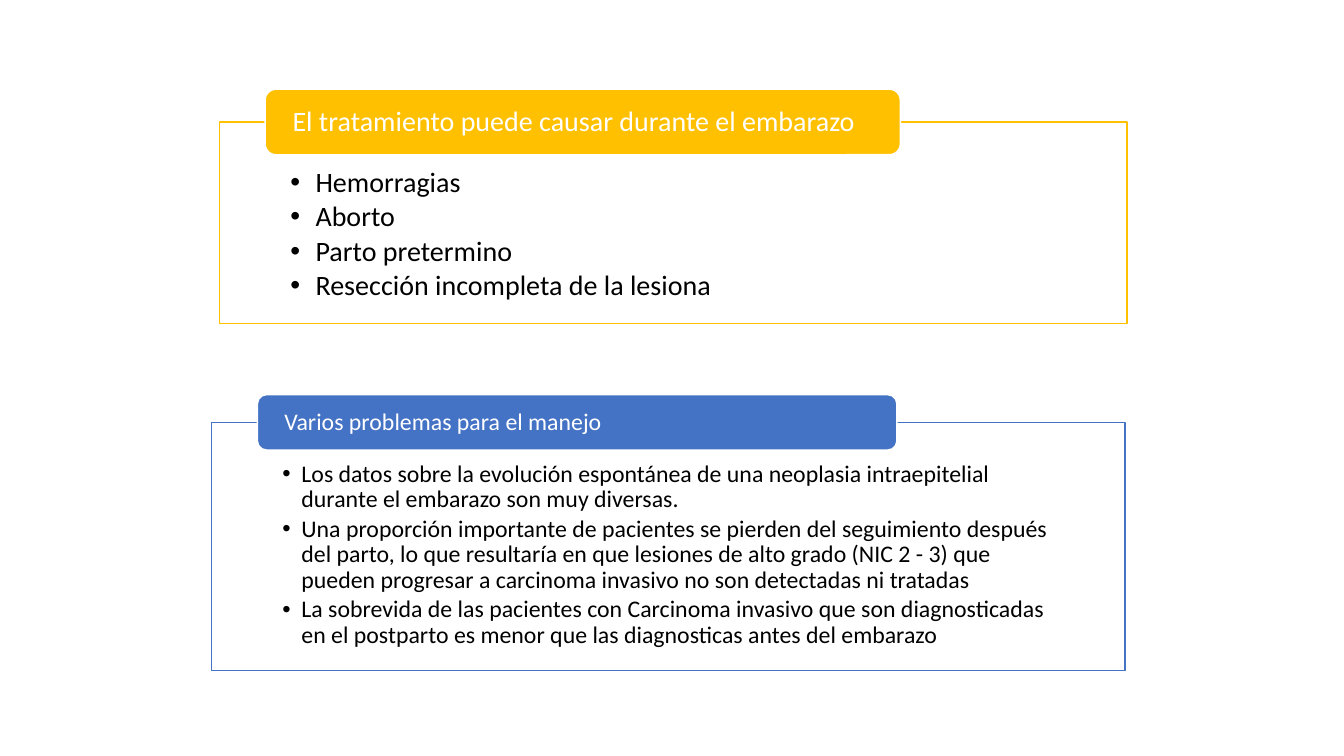
from lxml.etree import SubElement
from pptx import Presentation
from pptx.dml.color import RGBColor
from pptx.enum.shapes import MSO_SHAPE
from pptx.enum.text import MSO_ANCHOR, PP_ALIGN
from pptx.oxml.ns import qn
from pptx.util import Inches, Pt

COLORS = {"gold": "FFC000", "blue": "4472C4", "white": "FFFFFF", "black": "000000"}

PANELS = [
    {
        "box": (2.18, 1.21, 9, 2), "tab": 0.65, "color": "gold", "size": 20,
        "indent": 0.25, "pad": (0.46, 0.16),
        "title": "El tratamiento puede causar durante el embarazo",
        "items": [
            "Hemorragias",
            "Aborto",
            "Parto pretermino",
            "Resección incompleta de la lesiona",
        ],
    },
    {
        "box": (2.1, 4.19, 9.06, 2.46), "tab": 0.55, "color": "blue", "size": 17,
        "indent": 0.19, "pad": (0.39, 0.13),
        "title": "Varios problemas para el manejo",
        "items": [
            "Los datos sobre la evolución espontánea de una neoplasia "
            "intraepitelial durante el embarazo son muy diversas.",
            "Una proporción importante de pacientes se pierden del seguimiento "
            "después del parto, lo que resultaría en que lesiones de alto grado "
            "(NIC 2 - 3) que pueden progresar a carcinoma invasivo no son "
            "detectadas ni tratadas",
            "La sobrevida de las pacientes con Carcinoma invasivo que son "
            "diagnosticadas en el postparto es menor que las diagnosticas antes "
            "del embarazo",
        ],
    },
]


def rgb(name):
    return RGBColor.from_string(COLORS[name])


def set_all(target, values):
    for name, value in values.items():
        setattr(target, name, value)


def add_box(group, kind, box, fill, line, pad, anchor):
    """Add a filled shape; pad is left, top, right, bottom in inches."""
    shape = group.shapes.add_shape(kind, *map(Inches, box))
    shape.shadow.inherit = False
    shape.fill.solid()
    shape.fill.fore_color.rgb = rgb(fill)
    shape.line.color.rgb = rgb(line)
    shape.line.width = Pt(1)
    sides = ("margin_left", "margin_top", "margin_right", "margin_bottom")
    set_all(shape.text_frame, {
        "word_wrap": True, "vertical_anchor": anchor,
        **dict(zip(sides, map(Inches, pad))),
    })
    return shape


def write(frame, texts, size, color, after):
    """Fill the frame, one paragraph a text; after is a share of the size."""
    for i, text in enumerate(texts):
        para = frame.add_paragraph() if i else frame.paragraphs[0]
        set_all(para, {
            "alignment": PP_ALIGN.LEFT, "line_spacing": 0.9,
            "space_after": Pt(size * after),
        })
        run = para.add_run()
        run.text = text
        set_all(run.font, {"name": "Calibri", "size": Pt(size)})
        run.font.color.rgb = rgb(color)


def add_bullet(para, indent):
    para.level = 1
    props = para._p.get_or_add_pPr()
    props.set("marL", str(Inches(indent)))
    props.set("indent", str(-Inches(indent)))
    SubElement(props, qn("a:buFont"), typeface="Arial")
    SubElement(props, qn("a:buChar"), char="•")


def add_panel(slide, panel):
    """Outlined list with a title tab centred on its top edge."""
    left, top, width, height = panel["box"]
    group = slide.shapes.add_group_shape()
    above, below = panel["pad"]
    body = add_box(group, MSO_SHAPE.RECTANGLE, panel["box"], "white",
                   panel["color"], (0.7, above, 0.7, below), MSO_ANCHOR.TOP)
    tint = body.fill._xPr.find(qn("a:solidFill"))[0]
    SubElement(tint, qn("a:alpha"), val="90000")
    write(body.text_frame, panel["items"], panel["size"], "black", 0.15)
    for para in body.text_frame.paragraphs:
        add_bullet(para, panel["indent"])

    tab = panel["tab"]
    spot = (left + width * 0.05, top - tab / 2, width * 0.7, tab)
    title = add_box(group, MSO_SHAPE.ROUNDED_RECTANGLE, spot, panel["color"],
                    "white", (0.24, 0, 0.24, 0), MSO_ANCHOR.MIDDLE)
    write(title.text_frame, [panel["title"]], panel["size"], "white", 0.35)


def main():
    deck = Presentation()
    set_all(deck, {"slide_width": Inches(13.33), "slide_height": Inches(7.5)})
    slide = deck.slides.add_slide(deck.slide_layouts[6])
    for panel in PANELS:
        add_panel(slide, panel)
    deck.save("out.pptx")


if __name__ == "__main__":
    main()
